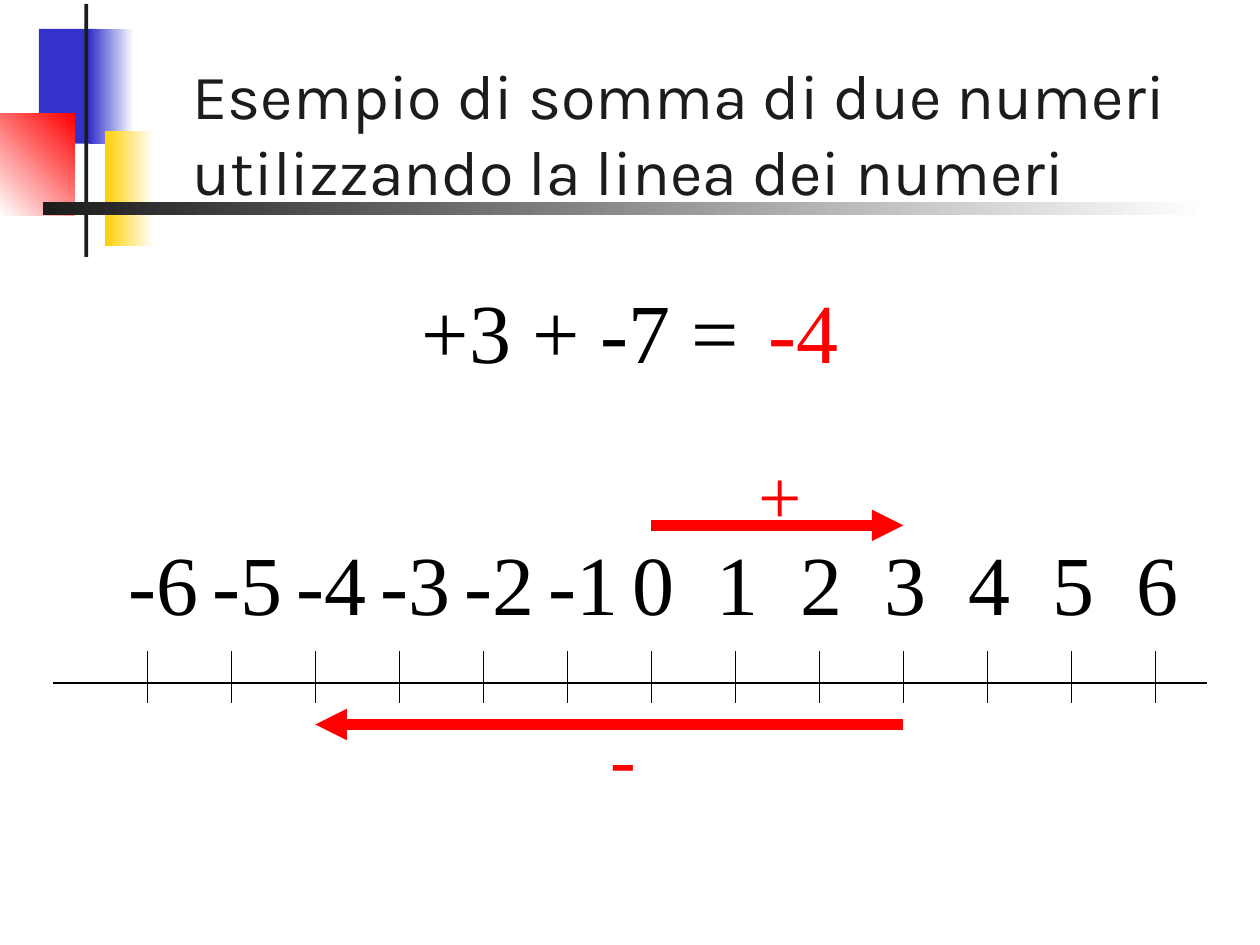
import pptx
import pptx.util
import pptx.dml.color
import pptx.enum.shapes
import pptx.enum.text
import lxml.etree

Inches = pptx.util.Inches
THEME = {
    "black": "000000", "white": "FFFFFF", "red": "FF0000", "blue": "3333CC",
    "gold": "FFCF01", "ink": "1C1C1C",
    "serif": "Times New Roman", "sans": "Karla",
    "title": 36, "sign": 44, "digit": 48, "thin": 0.75, "thick": 6,
}
TITLE = "Esempio di somma di due numeri utilizzando la linea dei numeri"
NUMS = range(-6, 7)
ZERO, STEP = 5.17, 2 / 3
AXIS = (0.42, 5.42, 9.58, 5.42)
JUMPS = [(0, 3, 4.17), (3, -4, 5.75)]
LABELS = [
    ("+", (5.92, 3.5, 0.55, 0.83), "sign", "red"),
    ("-", (4.75, 5.58, 0.4, 0.83), "sign", "red"),
    ("+3 + -7 =", (3.25, 2.17, 2.72, 0.9), "digit", "black"),
    ("-4", (6, 2.17, 0.92, 0.9), "digit", "red"),
]
DECOR = [
    ((0.31, 0.23, 0.46, 0.91), ["blue"], 0),
    ((0.71, 0.23, 0.35, 0.91), ["blue", "white"], 0),
    ((0.83, 1.04, 0.39, 0.91), ["gold", "white"], 0),
    ((0, 0.9, 0.59, 0.81), ["white", "red"], 45),
    ((0.67, 0.03, 0.03, 2.01), ["ink"], 0),
    ((0.34, 1.6, 9.23, 0.11), ["ink", "white"], 0),
]


def tint(name):
    """Return a theme colour."""
    return pptx.dml.color.RGBColor.from_string(THEME[name])


def spot(num):
    """Return the x place of a number on the line."""
    return ZERO + num * STEP


def rule(slide, ends, color, width, arrow=False):
    """Draw a straight line, with an arrowhead if asked."""
    kind = pptx.enum.shapes.MSO_CONNECTOR.STRAIGHT
    line = slide.shapes.add_connector(kind, *map(Inches, ends))
    line.line.color.rgb = tint(color)
    line.line.width = pptx.util.Pt(THEME[width])
    if arrow:
        edge = line.line._get_or_add_ln()
        tag = pptx.oxml.ns.qn("a:tailEnd")
        lxml.etree.SubElement(edge, tag, type="triangle")
    tag = pptx.oxml.ns.qn("a:effectLst")
    lxml.etree.SubElement(line._element.spPr, tag)


def write(slide, text, area, size, color, font="serif", wrap=False):
    """Place a text box."""
    frame = slide.shapes.add_textbox(*map(Inches, area)).text_frame
    frame.text = text
    frame.word_wrap = wrap
    fit = pptx.enum.text.MSO_AUTO_SIZE
    frame.auto_size = fit.NONE if wrap else fit.SHAPE_TO_FIT_TEXT
    face = frame.paragraphs[0].runs[0].font
    face.name = THEME[font]
    face.size = pptx.util.Pt(THEME[size])
    face.color.rgb = tint(color)


def block(slide, area, colors, angle):
    """Draw a plain or graded rectangle."""
    kind = pptx.enum.shapes.MSO_SHAPE.RECTANGLE
    shape = slide.shapes.add_shape(kind, *map(Inches, area))
    shape.shadow.inherit = False
    shape.line.fill.background()
    if len(colors) == 1:
        shape.fill.solid()
        shape.fill.fore_color.rgb = tint(colors[0])
        return
    shape.fill.gradient()
    shape.fill.gradient_angle = angle
    for stop, name in zip(shape.fill.gradient_stops, colors):
        stop.color.rgb = tint(name)


def main():
    """Build the number line slide."""
    deck = pptx.Presentation()
    deck.slide_width, deck.slide_height = Inches(10), Inches(7.5)
    slide = deck.slides.add_slide(deck.slide_layouts[6])
    for item in DECOR:
        block(slide, *item)
    rule(slide, AXIS, "black", "thin")
    for num in NUMS:
        x = spot(num)
        rule(slide, (x, 5.17, x, 5.58), "black", "thin")
        wide = 0.76 if num < 0 else 0.53
        write(slide, str(num), (x - 0.25, 4.17, wide, 0.9), "digit", "black")
    for start, end, y in JUMPS:
        rule(slide, (spot(start), y, spot(end), y), "red", "thick", True)
    for item in LABELS:
        write(slide, *item)
    write(slide, TITLE, (1.43, 0.4, 8.52, 1.6), "title", "ink", "sans", True)
    deck.save("out.pptx")


if __name__ == "__main__":
    main()
